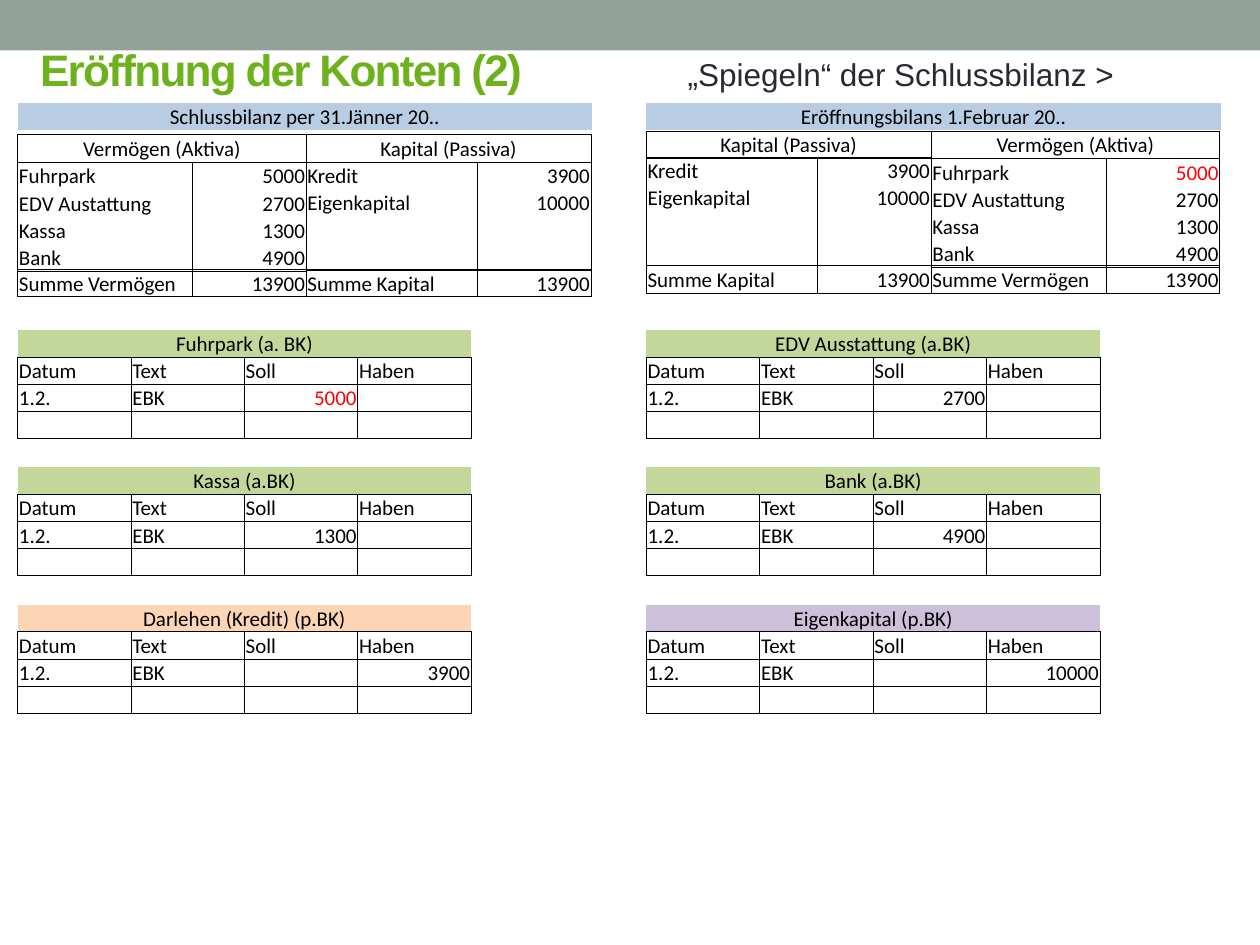
from lxml import etree
from pptx import Presentation
from pptx import util as u
from pptx.dml.color import RGBColor
from pptx.enum import shapes, text
from pptx.oxml.ns import qn

LEFT, RIGHT = 0.14, 5.13          # left edges of the two halves
ROW = 0.86 / 4                    # height of every table row
AMOUNT = 0.9                      # width of amount and ledger columns
ASSETS, CAPITAL = [1.39, AMOUNT], [1.36, AMOUNT]
ALL = "LRTB"


def color(value):
    return RGBColor.from_string(value)


def add_grid(left, top, widths, rows, borders, fill=None, red=None):
    """Add a table; with a fill, the first row is a merged, filled heading.

    borders holds the bordered sides of each row; red is the marked amount.
    """
    frame = page.shapes.add_table(
        len(rows), len(widths), u.Inches(left), u.Inches(top),
        u.Inches(sum(widths)), u.Inches(ROW * len(rows)))
    table = frame.table
    table.first_row = table.horz_banding = False
    for column, width in zip(table.columns, widths):
        column.width = u.Inches(width)
    for r, values in enumerate(rows):
        table.rows[r].height = u.Inches(ROW)
        for c, value in enumerate(values):
            cell = table.cell(r, c)
            cell.margin_left = cell.margin_right = cell.margin_top = u.Inches(0.01)
            cell.margin_bottom = 0
            cell.vertical_anchor = text.MSO_ANCHOR.BOTTOM
            # Cell borders
            props = cell._tc.get_or_add_tcPr()
            for side in ALL:
                line = etree.SubElement(props, qn("a:ln" + side), w="6350")
                if side in borders[r]:
                    solid = etree.SubElement(line, qn("a:solidFill"))
                    etree.SubElement(solid, qn("a:srgbClr"), val="000000")
                else:
                    etree.SubElement(line, qn("a:noFill"))
            # Cell fill and text
            if fill and r == 0:
                cell.fill.solid()
                cell.fill.fore_color.rgb = color(fill)
            else:
                cell.fill.background()
            para = cell.text_frame.paragraphs[0]
            para.font.size, para.font.name = u.Pt(12), "Calibri"
            para.font.color.rgb = color("FF0000" if value and value == red else "000000")
            if value:
                para.text = value
            else:
                etree.SubElement(para._p, qn("a:endParaRPr"), sz="1200")
            if value.isdigit():
                para.alignment = text.PP_ALIGN.RIGHT
            elif (fill and r == 0) or "(" in value:
                para.alignment = text.PP_ALIGN.CENTER
    if fill and len(widths) > 1:
        table.cell(0, 0).merge(table.cell(0, len(widths) - 1))


deck = Presentation()
deck.slide_width, deck.slide_height = u.Inches(10), u.Inches(7.5)
page = deck.slides.add_slide(deck.slide_layouts[6])

# Top band
band = page.shapes.add_shape(shapes.MSO_SHAPE.RECTANGLE, 0, 0, deck.slide_width, u.Inches(0.4))
band.shadow.inherit = False
band.fill.solid()
band.fill.fore_color.rgb = color("93A299")
band.line.fill.background()

# Title and side note
for words, place, size, tint, title in [
    ("Eröffnung der Konten (2)", (0.22, 0.3, 9, 0.5), 25.2, "6DB21C", True),
    ("„Spiegeln“ der Schlussbilanz >", (5.36, 0.39, 3.62, 0.4), 18, "292934", False),
]:
    box = page.shapes.add_textbox(*[u.Inches(length) for length in place])
    box.text_frame.word_wrap = title
    para = box.text_frame.paragraphs[0]
    span = para.add_run()
    span.text = words
    para.font.name, para.font.size, para.font.bold = "Arial", u.Pt(size), title
    para.font.color.rgb = color(tint)
    if title:
        box.text_frame.vertical_anchor = text.MSO_ANCHOR.MIDDLE
        span.font._element.set("spc", "-100")
    else:
        box.text_frame.auto_size = text.MSO_AUTO_SIZE.SHAPE_TO_FIT_TEXT

# Balance sheet headings
for left, heading in [(LEFT, "Schlussbilanz per 31.Jänner 20.."),
                      (RIGHT, "Eröffnungsbilans 1.Februar 20..")]:
    add_grid(left, 0.82, [sum(ASSETS + CAPITAL) + 0.01], [[heading]], [""], fill="B8CCE4")

# Balance sheets: assets and capital swap sides in the opening balance
names = ["Fuhrpark", "EDV Austattung", "Kassa", "Bank"]
amounts = ["5000", "2700", "1300", "4900"]
for left, top, red in [(LEFT, 1.07, None), (RIGHT + sum(CAPITAL), 1.04, "5000")]:
    add_grid(left, top, [sum(ASSETS)], [["Vermögen (Aktiva)"]], [ALL])
    for offset, width, entries in [(0, ASSETS[0], names), (ASSETS[0], AMOUNT, amounts)]:
        add_grid(left + offset, top + 0.22, [width], [[entry] for entry in entries],
                 ["LRT", "LR", "LR", "LRB"], red=red)
    add_grid(left, top + 1.07, ASSETS, [["Summe Vermögen", "13900"]], [ALL])

for left, top, body in [(LEFT + sum(ASSETS), 1.07, 1.29), (RIGHT, 1.04, 1.25)]:
    add_grid(left, top + 1.07, CAPITAL, [["Summe Kapital", "13900"]], [ALL])
    add_grid(left, body, CAPITAL, [["Kredit", "3900"]], ["LRT"])
    add_grid(left, body + 0.21, CAPITAL,
             [["Eigenkapital", "10000"], ["", ""], ["", ""]], ["LR", "LR", "LRB"])
    add_grid(left, top, [sum(CAPITAL)], [["Kapital (Passiva)"]], [ALL])

# Ledger accounts: two columns, three rows
accounts = [
    ("Fuhrpark (a. BK)", "C4D79B", "5000", "", "5000"),
    ("EDV Ausstattung (a.BK)", "C4D79B", "2700", "", None),
    ("Kassa (a.BK)", "C4D79B", "1300", "", None),
    ("Bank (a.BK)", "C4D79B", "4900", "", None),
    ("Darlehen (Kredit) (p.BK)", "FCD5B4", "", "3900", None),
    ("Eigenkapital (p.BK)", "CCC0DA", "", "10000", None),
]
for index, (account, fill, debit, credit, red) in enumerate(accounts):
    add_grid((LEFT, RIGHT)[index % 2], 2.62 + 1.09 * (index // 2), [AMOUNT] * 4,
             [[account, "", "", ""],
              ["Datum", "Text", "Soll", "Haben"],
              ["1.2.", "EBK", debit, credit],
              [""] * 4],
             ["B", ALL, ALL, ALL], fill=fill, red=red)

deck.save("out.pptx")
